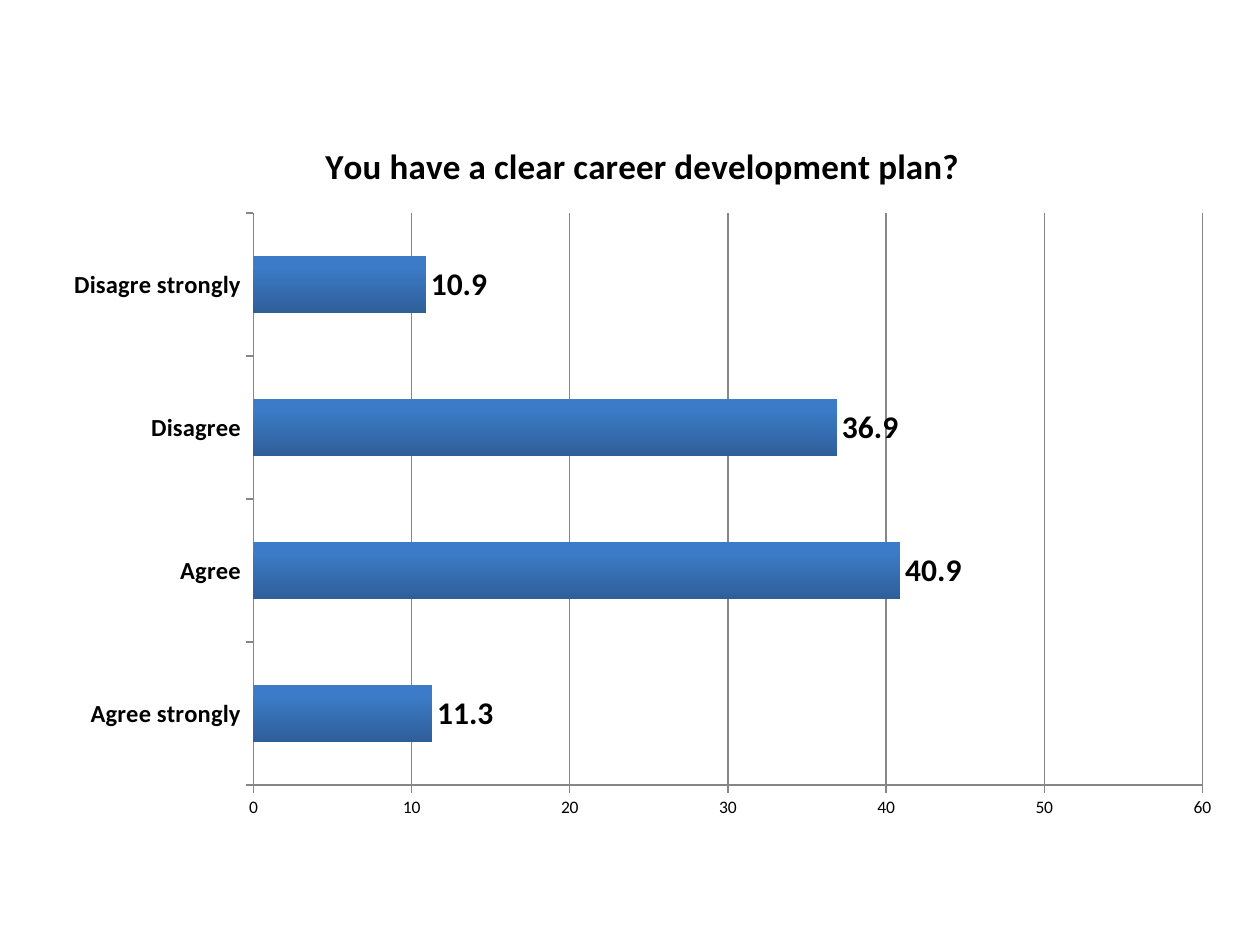
from pptx import Presentation
from pptx.chart.data import CategoryChartData
from pptx.dml.color import RGBColor
from pptx.enum.chart import XL_CHART_TYPE, XL_LABEL_POSITION, XL_TICK_MARK
from pptx.util import Inches, Pt

BAR_CLUSTERED = XL_CHART_TYPE.BAR_CLUSTERED
OUTSIDE_END = XL_LABEL_POSITION.OUTSIDE_END
TICK_OUTSIDE = XL_TICK_MARK.OUTSIDE
TICK_NONE = XL_TICK_MARK.NONE

BLACK = RGBColor(0x00, 0x00, 0x00)
GRAY = RGBColor(0x86, 0x86, 0x86)
BAR_TOP = RGBColor(0x3C, 0x7B, 0xC7)
BAR_BOTTOM = RGBColor(0x2E, 0x5F, 0x99)
BLANK_LAYOUT = 6

ANSWERS = {
    "Agree strongly": 11.3,
    "Agree": 40.9,
    "Disagree": 36.9,
    "Disagre strongly": 10.9,
}


class SurveySlide:
    font_name = "Calibri"

    def __init__(self, presentation):
        self.width = presentation.slide_width
        self.height = presentation.slide_height
        self.slide = presentation.slides.add_slide(presentation.slide_layouts[BLANK_LAYOUT])

    def style_font(self, font, size, bold=False):
        font.name = self.font_name
        font.size = Pt(size)
        font.bold = bold
        font.color.rgb = BLACK

    def style_line(self, line):
        line.color.rgb = GRAY
        line.width = Pt(0.75)

    def style_axis(self, axis, size, bold, grid):
        axis.has_major_gridlines = grid
        axis.major_tick_mark = TICK_OUTSIDE
        axis.minor_tick_mark = TICK_NONE
        self.style_line(axis.format.line)
        self.style_font(axis.tick_labels.font, size, bold)
        if grid:
            self.style_line(axis.major_gridlines.format.line)

    def style_bars(self, plot):
        plot.gap_width = 150
        plot.vary_by_categories = False
        fill = plot.series[0].format.fill
        fill.gradient()
        fill.gradient_angle = 270
        stops = zip(fill.gradient_stops, (BAR_TOP, BAR_BOTTOM), (0.2, 1))
        for stop, color, position in stops:
            stop.color.rgb = color
            stop.position = position
        plot.has_data_labels = True
        labels = plot.data_labels
        labels.show_value = True
        labels.position = OUTSIDE_END
        self.style_font(labels.font, 18, True)

    def add_bar_chart(self, title, answers, left, top, width, height):
        data = CategoryChartData()
        data.categories = list(answers)
        data.add_series("Series 1", list(answers.values()))
        chart = self.slide.shapes.add_chart(
            BAR_CLUSTERED,
            round(self.width * left), round(self.height * top),
            round(self.width * width), round(self.height * height),
            data,
        ).chart
        self.style_font(chart.font, 10)
        chart.has_legend = False
        chart.has_title = True
        run = chart.chart_title.text_frame.paragraphs[0].add_run()
        run.text = title
        self.style_font(run.font, 20, True)
        chart.chart_title.include_in_layout = False
        self.style_axis(chart.category_axis, 14, True, False)
        self.style_axis(chart.value_axis, 10, False, True)
        chart.value_axis.minimum_scale = 0
        chart.value_axis.maximum_scale = 60
        chart.value_axis.major_unit = 10
        self.style_bars(chart.plots[0])


def main():
    presentation = Presentation()
    presentation.slide_width = Inches(10)
    presentation.slide_height = Inches(7.5)
    survey = SurveySlide(presentation)
    survey.add_bar_chart(
        "You have a clear career development plan?", ANSWERS,
        left=0.04, top=0.12, width=0.94, height=0.76,
    )
    presentation.save("out.pptx")


if __name__ == "__main__":
    main()
